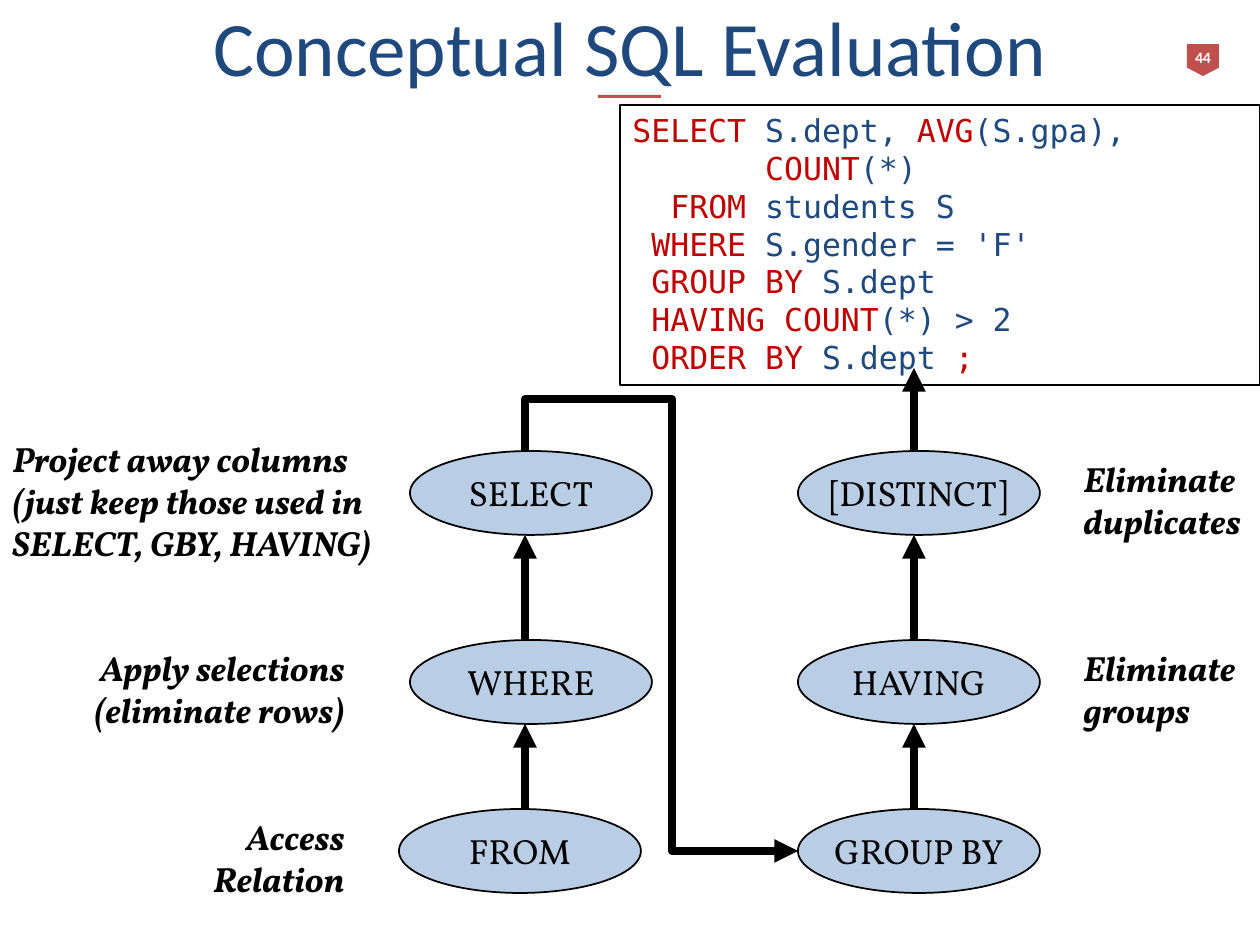
import pptx
import pptx.util
import pptx.dml.color
import pptx.enum.shapes
import pptx.enum.text
import pptx.oxml.ns
import lxml.etree

RGB = pptx.dml.color.RGBColor
NAVY = RGB(0x1F, 0x49, 0x7D)
BRICK = RGB(0xC0, 0x50, 0x4D)
RED = RGB(0xC0, 0x00, 0x00)
SKY = RGB(0xB9, 0xCD, 0xE5)
BLACK = RGB(0, 0, 0)
WHITE = RGB(0xFF, 0xFF, 0xFF)

SHAPE = pptx.enum.shapes.MSO_SHAPE
ALIGN = pptx.enum.text.PP_ALIGN
MIDDLE = pptx.enum.text.MSO_ANCHOR.MIDDLE
TOP = pptx.enum.text.MSO_ANCHOR.TOP
SCALE = 914400 // 126

QUERY = [
    [("SELECT ", RED), ("S.dept, ", NAVY), ("AVG", RED), ("(S.gpa),", NAVY)],
    [("       ", RED), ("COUNT", RED), ("(*)", NAVY)],
    [("  ", NAVY), ("FROM", RED), (" students S", NAVY)],
    [(" ", NAVY), ("WHERE ", RED), ("S.gender = 'F'", NAVY)],
    [(" ", NAVY), ("GROUP BY ", RED), ("S.dept", NAVY)],
    [(" ", NAVY), ("HAVING COUNT", RED), ("(*) > 2", NAVY)],
    [(" ", NAVY), ("ORDER BY ", RED), ("S.dept ", NAVY), (";", RED)],
]


def px(*nums):
    return [n * SCALE for n in nums]


def add_run(para, text, size, font, color, bold=False, slant=False):
    run = para.add_run()
    run.text = text
    run.font.size = pptx.util.Pt(size)
    run.font.name = font
    run.font.color.rgb = color
    run.font.bold = bold
    run.font.italic = slant


def add_form(home, kind, box, fill=None, edge=None):
    form = home.add_shape(kind, *px(*box))
    form.shadow.inherit = False
    if fill is None:
        form.fill.background()
    else:
        form.fill.solid()
        form.fill.fore_color.rgb = fill
    if edge is None:
        form.line.fill.background()
    else:
        form.line.color.rgb = edge
        form.line.width = pptx.util.Pt(1)
    return form


def add_text(home, box, lines, align, wrap=True, anchor=TOP, **style):
    frame = home.add_textbox(*px(*box)).text_frame
    frame.word_wrap = wrap
    frame.vertical_anchor = anchor
    for i, line in enumerate(lines):
        para = frame.add_paragraph() if i else frame.paragraphs[0]
        para.alignment = align
        add_run(para, line, **style)


def add_badge(slide, x, y):
    group = slide.shapes.add_group_shape().shapes
    plate = add_form(group, SHAPE.PENTAGON, (x, y, 32, 32), BRICK)
    plate.rotation = 90
    plate.adjustments[0] = 0.26
    add_text(group, (x - 5, y - 2, 42, 32), ["44"], ALIGN.CENTER, wrap=False,
             size=9, font="Calibri", color=WHITE, bold=True)


def add_title(slide, x, y, w, h):
    add_text(slide.shapes, (x, y, w, h), ["Conceptual SQL Evaluation"],
             ALIGN.CENTER, anchor=MIDDLE, size=44, font="Calibri", color=NAVY)
    add_form(slide.shapes, SHAPE.RECTANGLE,
             (x + w // 2 - 32, y + h + 13, 63, 3), BRICK)


def add_query(slide, *box):
    frame = add_form(slide.shapes, SHAPE.RECTANGLE, box, edge=BLACK).text_frame
    frame.word_wrap = True
    frame.vertical_anchor = TOP
    paras = [frame.paragraphs[0], frame.add_paragraph()]
    for i, line in enumerate(QUERY):
        para = paras[min(i, 1)]
        para.alignment = ALIGN.LEFT
        if i > 1:
            para.add_line_break()
        for text, color in line:
            add_run(para, text, 18, "DejaVu Sans Mono", color)


def add_step(slide, x, y, name):
    oval = add_form(slide.shapes, SHAPE.OVAL, (x, y, 242, 84), SKY, BLACK)
    frame = oval.text_frame
    frame.word_wrap = False
    frame.vertical_anchor = MIDDLE
    frame.paragraphs[0].alignment = ALIGN.CENTER
    add_run(frame.paragraphs[0], name, 20, "Vollkorn", BLACK)


def add_note(slide, box, lines, align=ALIGN.LEFT):
    add_text(slide.shapes, box, lines, align, size=20, font="Vollkorn",
             color=BLACK, bold=True, slant=True)


def set_line(item, end):
    item.line.color.rgb = BLACK
    item.line.width = pptx.util.Pt(4.5)
    tip = lxml.etree.SubElement(item.line._get_or_add_ln(),
                                pptx.oxml.ns.qn("a:" + end))
    tip.set("type", "triangle")


def add_arrow(slide, x, top, base):
    kind = pptx.enum.shapes.MSO_CONNECTOR.STRAIGHT
    arrow = slide.shapes.add_connector(kind, *px(x, top, x, base))
    set_line(arrow, "headEnd")
    lxml.etree.SubElement(arrow._element.spPr,
                          pptx.oxml.ns.qn("a:effectLst"))


def add_bend(slide, points):
    spots = [px(*point) for point in points]
    pen = slide.shapes.build_freeform(*spots[0])
    pen.add_line_segments(spots[1:], close=False)
    bend = pen.convert_to_shape()
    bend.shadow.inherit = False
    bend.fill.background()
    set_line(bend, "tailEnd")


def add_flow(slide, x, y):
    rows = [y, y + 189, y + 358]
    left, right = x + 410, x + 798
    for row, name, shift in zip(rows, ("SELECT", "WHERE", "FROM"), (0, 0, 11)):
        add_step(slide, left - shift, row, name)
    for row, name in zip(rows, ("[DISTINCT]", "HAVING", "GROUP BY")):
        add_step(slide, right, row, name)

    add_note(slide, (x, y - 20, 431, 139),
             ["Project away columns",
              "(just keep those used in SELECT, GBY, HAVING)"])
    add_note(slide, (x, rows[1], 357, 97),
             ["Apply selections", "(eliminate rows)"], ALIGN.RIGHT)
    add_note(slide, (x + 84, rows[2], 273, 97),
             ["Access", "Relation"], ALIGN.RIGHT)
    for row, word in zip(rows, ("duplicates", "groups")):
        add_note(slide, (x + 1071, row, 189, 97), ["Eliminate " + word])

    for mid in (x + 525, x + 914):
        for upper, lower in zip(rows, rows[1:]):
            add_arrow(slide, mid, upper + 84, lower)
    add_bend(slide, [(x + 525, y), (x + 525, y - 52), (x + 672, y - 52),
                     (x + 672, rows[2] + 42), (right, rows[2] + 42)])
    add_arrow(slide, x + 914, y - 83, y)


def main():
    deck = pptx.Presentation()
    deck.slide_width, deck.slide_height = pptx.util.Inches(10), pptx.util.Inches(7.5)
    slide = deck.slides.add_slide(deck.slide_layouts[6])
    add_badge(slide, 1187, 44)
    add_title(slide, 63, 10, 1134, 72)
    add_query(slide, 620, 105, 640, 280)
    add_flow(slide, 0, 451)
    deck.save("out.pptx")


if __name__ == "__main__":
    main()
